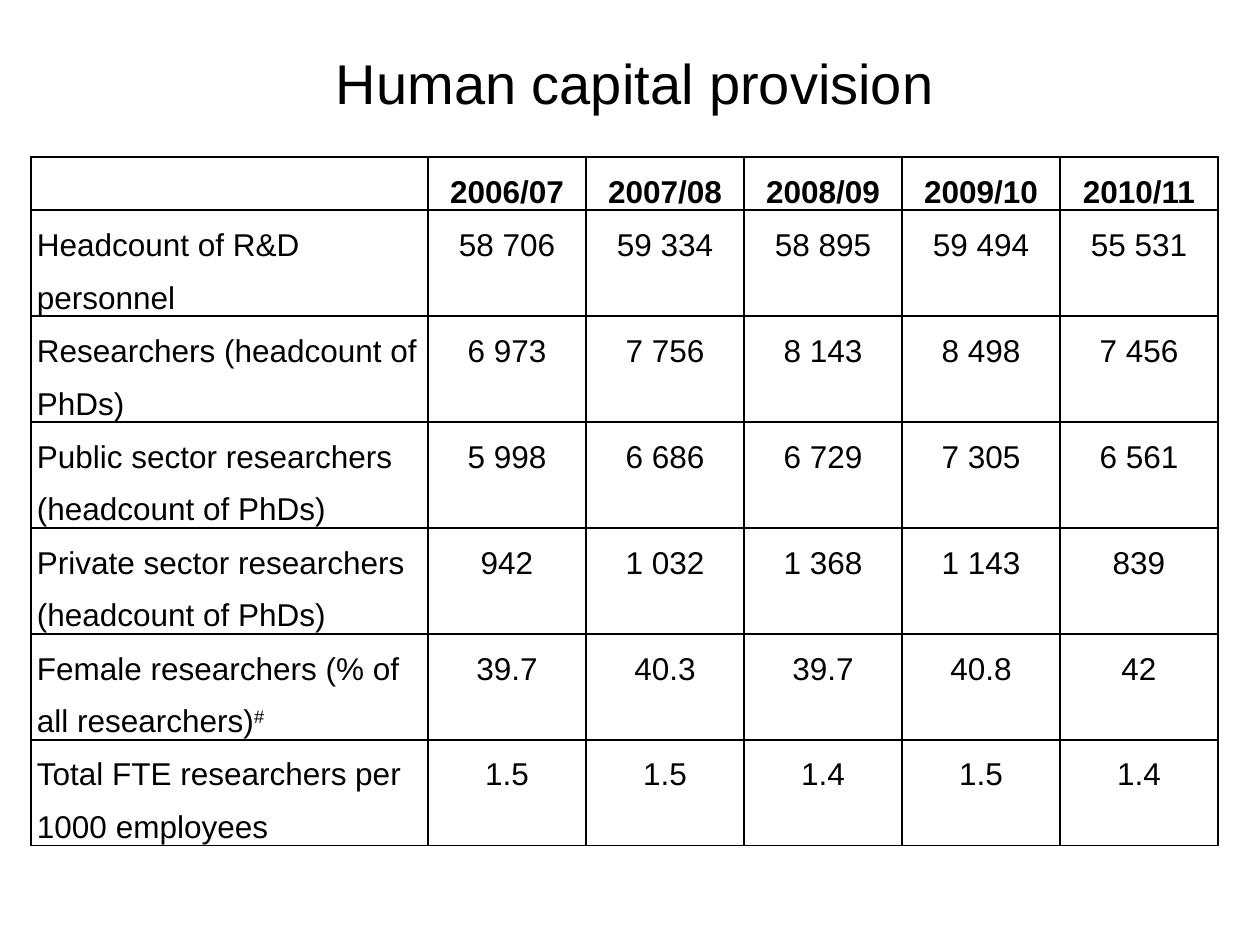
from lxml.etree import SubElement
from pptx import Presentation
from pptx.dml.color import RGBColor
from pptx.enum.text import MSO_ANCHOR, PP_ALIGN
from pptx.oxml.ns import qn
from pptx.util import Emu, Pt

EMU_PER_PX = 914400 // 126
BLACK = RGBColor(0, 0, 0)
WHITE = RGBColor(255, 255, 255)
FONT = "Arial"

LABEL_WIDTH, YEAR_WIDTH = 397, 158
HEADER_HEIGHT, ROW_HEIGHT = 53, 106
SIDE_MARGIN = 6
FOOTNOTE_MARK = "#"

YEARS = ["", "2006/07", "2007/08", "2008/09", "2009/10", "2010/11"]
INDICATORS = [
    ["Headcount of R&D personnel", "58 706", "59 334", "58 895", "59 494", "55 531"],
    ["Researchers (headcount of PhDs)", "6 973", "7 756", "8 143", "8 498", "7 456"],
    ["Public sector researchers (headcount of PhDs)",
     "5 998", "6 686", "6 729", "7 305", "6 561"],
    ["Private sector researchers (headcount of PhDs)",
     "942", "1 032", "1 368", "1 143", "839"],
    ["Female researchers (% of all researchers)" + FOOTNOTE_MARK,
     "39.7", "40.3", "39.7", "40.8", "42"],
    ["Total FTE researchers per 1000 employees", "1.5", "1.5", "1.4", "1.5", "1.4"],
]


def px(length):
    return Emu(length * EMU_PER_PX)


def style_font(font, size, bold=False):
    font.name = FONT
    font.size = Pt(size)
    font.bold = bold
    font.color.rgb = BLACK


def add_title(page, text):
    box = page.shapes.add_textbox(px(199), px(42), px(872), px(81))
    box.text_frame.word_wrap = True
    box.text_frame.text = text
    para = box.text_frame.paragraphs[0]
    para.alignment = PP_ALIGN.CENTER
    style_font(para.runs[0].font, 32)


def add_borders(cell):
    properties = cell._tc.get_or_add_tcPr()
    for side in ("a:lnL", "a:lnR", "a:lnT", "a:lnB"):
        line = SubElement(properties, qn(side), w=str(Pt(1)))
        fill = SubElement(line, qn("a:solidFill"))
        SubElement(fill, qn("a:srgbClr"), val=str(BLACK))


def fill_cell(cell, text, is_header, is_label):
    add_borders(cell)
    cell.fill.solid()
    cell.fill.fore_color.rgb = WHITE
    cell.margin_left = cell.margin_right = px(SIDE_MARGIN)
    cell.margin_top = cell.margin_bottom = 0
    cell.vertical_anchor = MSO_ANCHOR.TOP
    if not text:
        return
    para = cell.text_frame.paragraphs[0]
    para.text = text.removesuffix(FOOTNOTE_MARK)
    para.alignment = PP_ALIGN.LEFT if is_label else PP_ALIGN.CENTER
    para.line_spacing = 1.5
    if text.endswith(FOOTNOTE_MARK):
        mark = para.add_run()
        mark.text = FOOTNOTE_MARK
        mark.font._element.set("baseline", "30000")
    for span in para.runs:
        style_font(span.font, 18, is_header)


def add_indicator_table(page):
    rows = [YEARS] + INDICATORS
    widths = [LABEL_WIDTH] + [YEAR_WIDTH] * (len(YEARS) - 1)
    heights = [HEADER_HEIGHT] + [ROW_HEIGHT] * len(INDICATORS)
    table = page.shapes.add_table(len(rows), len(widths), px(31), px(157),
                                  px(sum(widths)), px(sum(heights))).table
    table.first_row = table.horz_banding = False
    for column, width in zip(table.columns, widths):
        column.width = px(width)
    for row, height in zip(table.rows, heights):
        row.height = px(height)
    for row_index, texts in enumerate(rows):
        for column_index, text in enumerate(texts):
            fill_cell(table.cell(row_index, column_index), text,
                      row_index == 0, column_index == 0)


def main():
    deck = Presentation()
    deck.slide_width, deck.slide_height = px(1260), px(945)
    page = deck.slides.add_slide(deck.slide_layouts[6])
    add_indicator_table(page)
    add_title(page, "Human capital provision")
    deck.save("out.pptx")


if __name__ == "__main__":
    main()
